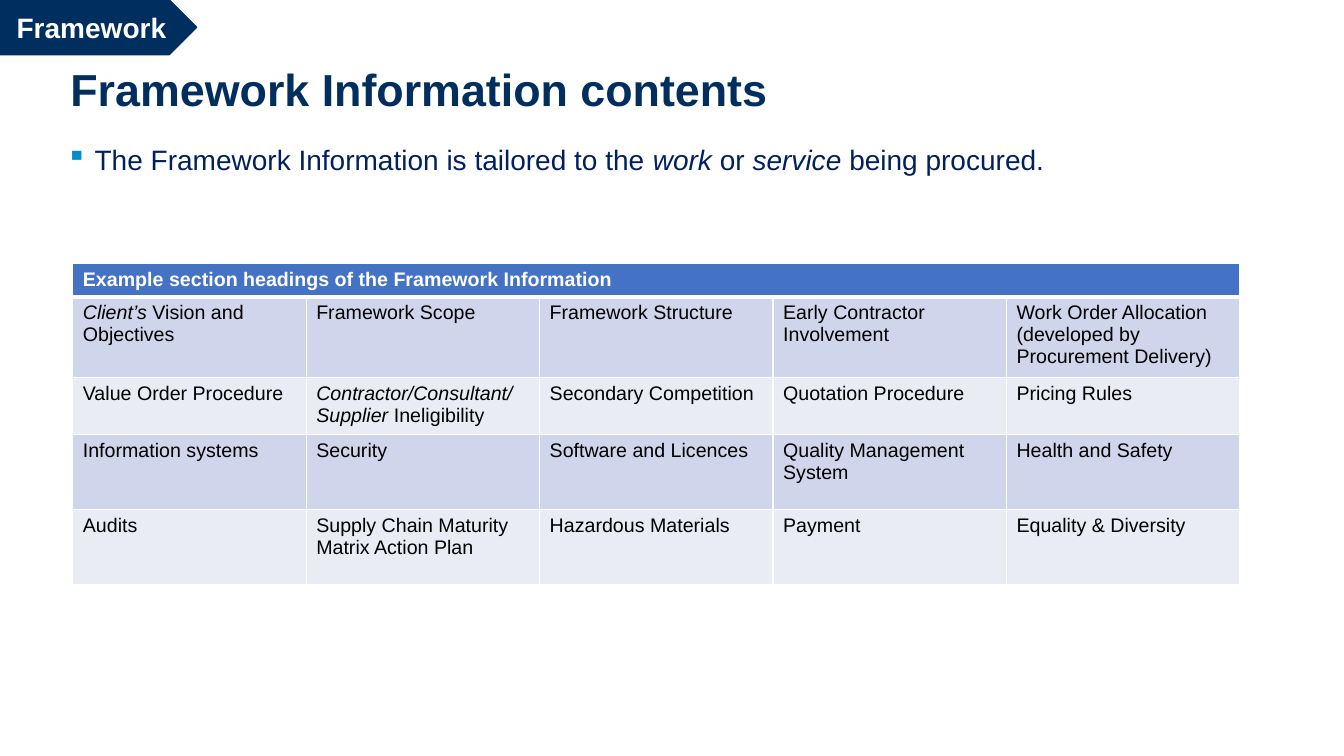
from lxml import etree
from pptx import Presentation
from pptx.dml.color import RGBColor
from pptx.enum.shapes import MSO_SHAPE
from pptx.enum.text import MSO_ANCHOR, PP_ALIGN
from pptx.oxml.ns import qn
from pptx.util import Pt

TAG = MSO_SHAPE.PENTAGON
MIDDLE, TOP = MSO_ANCHOR.MIDDLE, MSO_ANCHOR.TOP
LEFT, CENTER = PP_ALIGN.LEFT, PP_ALIGN.CENTER
NAVY, WHITE = "002E5F", "FFFFFF"
BANDS = "CFD5EA", "E9EBF5"
HEIGHTS = 22.9, 54.3, 38.6, 53.5, 53.5
WIDTH = 166.75
HEAD = "Example section headings of the Framework Information"
ROWS = [
    ["*Client’s *Vision and Objectives", "Framework Scope", "Framework Structure",
     "Early Contractor Involvement",
     "Work Order Allocation (developed by Procurement Delivery)"],
    ["Value Order Procedure", "*Contractor/Consultant/ Supplier *Ineligibility",
     "Secondary Competition", "Quotation Procedure", "Pricing Rules"],
    ["Information systems", "Security", "Software and Licences",
     "Quality Management System", "Health and Safety"],
    ["Audits", "Supply Chain Maturity Matrix Action Plan", "Hazardous Materials",
     "Payment", "Equality & Diversity"],
]


def color(code):
    return RGBColor.from_string(code)


def paint(fill, code):
    fill.solid()
    fill.fore_color.rgb = color(code)


def write(frame, text, size, code, bold=False, align=LEFT):
    para = frame.paragraphs[0]
    para.alignment = align
    font = para.font
    font.name, font.size, font.bold = "Arial", Pt(size), bold
    font.color.rgb = color(code)
    for index, part in enumerate(text.split("*")):
        if part:
            run = para.add_run()
            run.text = part
            if index % 2:
                run.font.italic = True
    return para


def add_box(slide, left, top, width, height, anchor=TOP):
    box = slide.shapes.add_textbox(Pt(left), Pt(top), Pt(width), Pt(height))
    frame = box.text_frame
    frame.word_wrap = True
    frame.vertical_anchor = anchor
    return frame


def add_mark(para, sign, code, indent):
    props = para._p.get_or_add_pPr()
    props.set("marL", str(Pt(indent)))
    props.set("indent", str(Pt(-indent)))
    tint = etree.Element(qn("a:buClr"))
    etree.SubElement(tint, qn("a:srgbClr"), val=code)
    mark = etree.Element(qn("a:buChar"), char=sign)
    props.insert_element_before(tint, "a:defRPr")
    props.insert_element_before(mark, "a:defRPr")


def add_tag(slide, text):
    tag = slide.shapes.add_shape(TAG, 0, 0, Pt(140.4), Pt(39))
    tag.shadow.inherit = False
    paint(tag.fill, NAVY)
    tag.line.color.rgb = color(NAVY)
    tag.line.width = Pt(1)
    tag.text_frame.word_wrap = True
    tag.text_frame.vertical_anchor = MIDDLE
    write(tag.text_frame, text, 20, WHITE, True, CENTER)


def add_edges(cell, top, bottom):
    props = cell._tc.get_or_add_tcPr()
    for side, width in zip("LRTB", (1, 1, top, bottom)):
        line = etree.SubElement(props, qn("a:ln" + side), w=str(Pt(width)))
        fill = etree.SubElement(line, qn("a:solidFill"))
        etree.SubElement(fill, qn("a:srgbClr"), val=WHITE)


def fill_cell(cell, text, back, fore="000000", top=1, bottom=1, bold=False):
    add_edges(cell, top, bottom)
    paint(cell.fill, back)
    write(cell.text_frame, text, 14, fore, bold)


def add_grid(slide):
    count = len(ROWS[0])
    frame = slide.shapes.add_table(len(HEIGHTS), count, Pt(52), Pt(188),
                                   Pt(WIDTH * count), Pt(sum(HEIGHTS)))
    table = frame.table
    for col in table.columns:
        col.width = Pt(WIDTH)
    for row, height in zip(table.rows, HEIGHTS):
        row.height = Pt(height)
    head = table.cell(0, 0)
    head.merge(table.cell(0, count - 1))
    head.vertical_anchor = MIDDLE
    for col in range(count):
        fill_cell(table.cell(0, col), "" if col else HEAD, "4472C4", WHITE,
                  bottom=3, bold=True)
    for row, texts in enumerate(ROWS, 1):
        for col, text in enumerate(texts):
            fill_cell(table.cell(row, col), text, BANDS[(row - 1) % 2],
                      top=3 if row == 1 else 1)


def main():
    deck = Presentation()
    deck.slide_width, deck.slide_height = Pt(960), Pt(540)
    slide = deck.slides.add_slide(deck.slide_layouts[6])
    title = add_box(slide, 43.2, 28.8, 873.4, 74.2, MIDDLE)
    write(title, "Framework Information contents", 32, NAVY, True).line_spacing = 0.9
    body = add_box(slide, 40.3, 98, 880, 404)
    para = write(body, "The Framework Information is tailored to the *work *or "
                 "*service *being procured.", 20, "002060")
    add_mark(para, "▪", "008BCB", 20.2)
    add_grid(slide)
    add_tag(slide, "Framework")
    deck.save("out.pptx")


if __name__ == "__main__":
    main()
